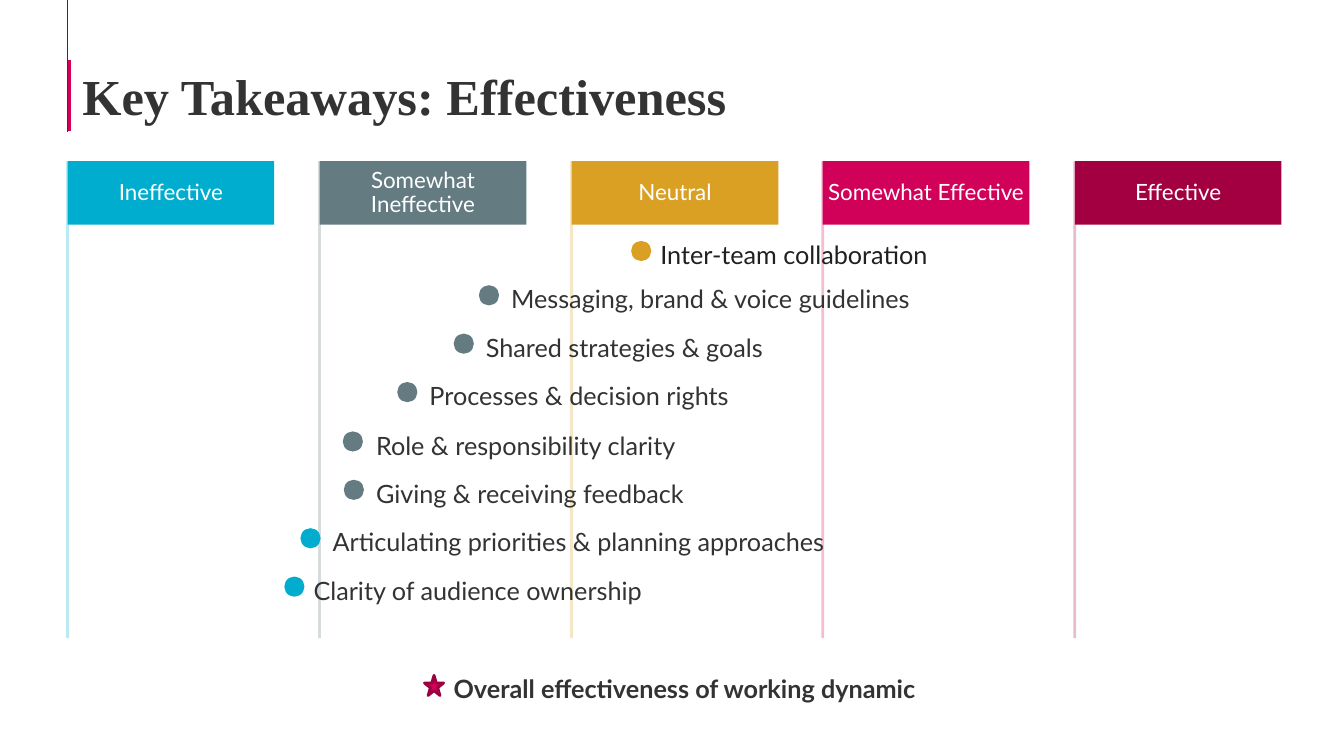
from dataclasses import dataclass

from lxml.etree import SubElement
from pptx import Presentation
from pptx.dml.color import RGBColor as RGB
from pptx.enum.shapes import MSO_CONNECTOR as CONNECTOR, MSO_SHAPE as SHAPE
from pptx.enum.text import MSO_ANCHOR as ANCHOR, MSO_AUTO_SIZE as AUTO_SIZE, PP_ALIGN as ALIGN
from pptx.oxml.ns import qn
from pptx.util import Pt

PX = 9144  # EMU per px, 100 px to the inch


@dataclass(frozen=True)
class Theme:
    cyan: str = "00ADCE"
    slate: str = "637B81"
    gold: str = "D9A024"
    pink: str = "D10058"
    wine: str = "A30041"
    star_edge: str = "9B0041"
    ink: str = "333333"
    dark_ink: str = "1F2022"
    white: str = "FFFFFF"
    title_font: str = "Times New Roman"
    body_font: str = "Lato"
    title_size: int = 36
    label_size: int = 18
    heading_size: int = 16


THEME = Theme()

# Rating scale, left to right
RATINGS = [
    ("Ineffective", THEME.cyan),
    ("Somewhat Ineffective", THEME.slate),
    ("Neutral", THEME.gold),
    ("Somewhat Effective", THEME.pink),
    ("Effective", THEME.wine),
]
RATING_LEFT, RATING_STEP = 67, 249.75
RATING_TOP, RATING_BOTTOM = 160, 633

# Topic, dot left, label left, dot colour
FIRST_TOPIC = ("Inter-team collaboration", 626, 642, THEME.gold)
TOPICS = [
    ("Messaging, brand & voice guidelines", 475, 494, THEME.slate),
    ("Shared strategies & goals", 450, 469, THEME.slate),
    ("Processes & decision rights", 394, 413, THEME.slate),
    ("Role & responsibility clarity", 340, 360, THEME.slate),
    ("Giving & receiving feedback", 341, 360, THEME.slate),
    ("Articulating priorities & planning approaches", 298, 317, THEME.cyan),
    ("Clarity of audience ownership", 282, 298, THEME.cyan),
]
TOPIC_TOP, TOPIC_STEP = 269, 48.2


def px(*lengths):
    return [length * PX for length in lengths]


def write(frame, text, *, size, color=THEME.ink, font=THEME.body_font, bold=False,
          align=ALIGN.LEFT, anchor=ANCHOR.TOP, spacing=1.0, insets=(10, 5, 10, 5)):
    frame.word_wrap = True
    frame.vertical_anchor = anchor
    (frame.margin_left, frame.margin_top,
     frame.margin_right, frame.margin_bottom) = px(*insets)
    paragraph = frame.paragraphs[0]
    paragraph.alignment = align
    paragraph.line_spacing = spacing
    run = paragraph.add_run()
    run.text = text
    run.font.name = font
    run.font.size = Pt(size)
    run.font.bold = bold
    run.font.color.rgb = RGB.from_string(color)


def add_block(slide, kind, box, fill, edge=None):
    block = slide.shapes.add_shape(kind, *px(*box))
    block.shadow.inherit = False
    block.fill.solid()
    block.fill.fore_color.rgb = RGB.from_string(fill)
    if edge:
        block.line.color.rgb = RGB.from_string(edge)
        block.line.width = Pt(2)
    else:
        block.line.fill.background()
    return block


def add_rule(slide, start, end, color, width=2.0, opacity=100):
    rule = slide.shapes.add_connector(CONNECTOR.STRAIGHT, *px(*start, *end))
    rule.line.width = Pt(width)
    rule.line.color.rgb = RGB.from_string(color)
    properties = rule._element.spPr
    if opacity < 100:
        tint = next(properties.iter(qn("a:srgbClr")))
        SubElement(tint, qn("a:alpha"), val=str(opacity * 1000))
    SubElement(properties, qn("a:effectLst"))


def add_label(slide, text, left, top, width=513, **style):
    label = slide.shapes.add_textbox(*px(left, top, width, 48))
    write(label.text_frame, text, size=THEME.label_size, spacing=1.25,
          insets=(13, 5, 10, 5), **style)
    label.text_frame.auto_size = AUTO_SIZE.SHAPE_TO_FIT_TEXT


def add_rating(slide, left, text, color):
    add_rule(slide, (left, RATING_TOP), (left, RATING_BOTTOM), color, opacity=25)
    heading = add_block(slide, SHAPE.RECTANGLE, (left, RATING_TOP, 205, 63), color)
    write(heading.text_frame, text, size=THEME.heading_size, color=THEME.white,
          align=ALIGN.CENTER, anchor=ANCHOR.MIDDLE, spacing=0.9, insets=(4, 4, 4, 4))


def add_topic(slide, topic, top, **style):
    text, dot_left, label_left, color = topic
    add_label(slide, text, label_left, top, **style)
    add_block(slide, SHAPE.OVAL, (dot_left, top + 14, 20, 20), color)


def main():
    deck = Presentation()
    deck.slide_width, deck.slide_height = px(1333, 750)
    slide = deck.slides.add_slide(deck.slide_layouts[6])

    # Rating columns
    for column, (text, color) in enumerate(RATINGS):
        add_rating(slide, RATING_LEFT + round(column * RATING_STEP), text, color)

    # Title with its accent
    add_rule(slide, (69, 130), (69, 60), THEME.pink)
    add_rule(slide, (67, 131), (67, 0), THEME.ink, width=0.75)
    title = slide.shapes.add_textbox(*px(72, 60, 986, 64))
    write(title.text_frame, "Key Takeaways: Effectiveness", size=THEME.title_size,
          font=THEME.title_font, bold=True)

    # Topics placed along the scale
    add_topic(slide, FIRST_TOPIC, 225, width=294, color=THEME.dark_ink)
    for row, topic in enumerate(TOPICS):
        add_topic(slide, topic, TOPIC_TOP + round(row * TOPIC_STEP))

    # Overall rating
    add_label(slide, "Overall effectiveness of working dynamic", 437, 656, bold=True)
    add_block(slide, SHAPE.STAR_5_POINT, (421, 670, 19, 20), THEME.pink, THEME.star_edge)

    deck.save("out.pptx")


if __name__ == "__main__":
    main()
